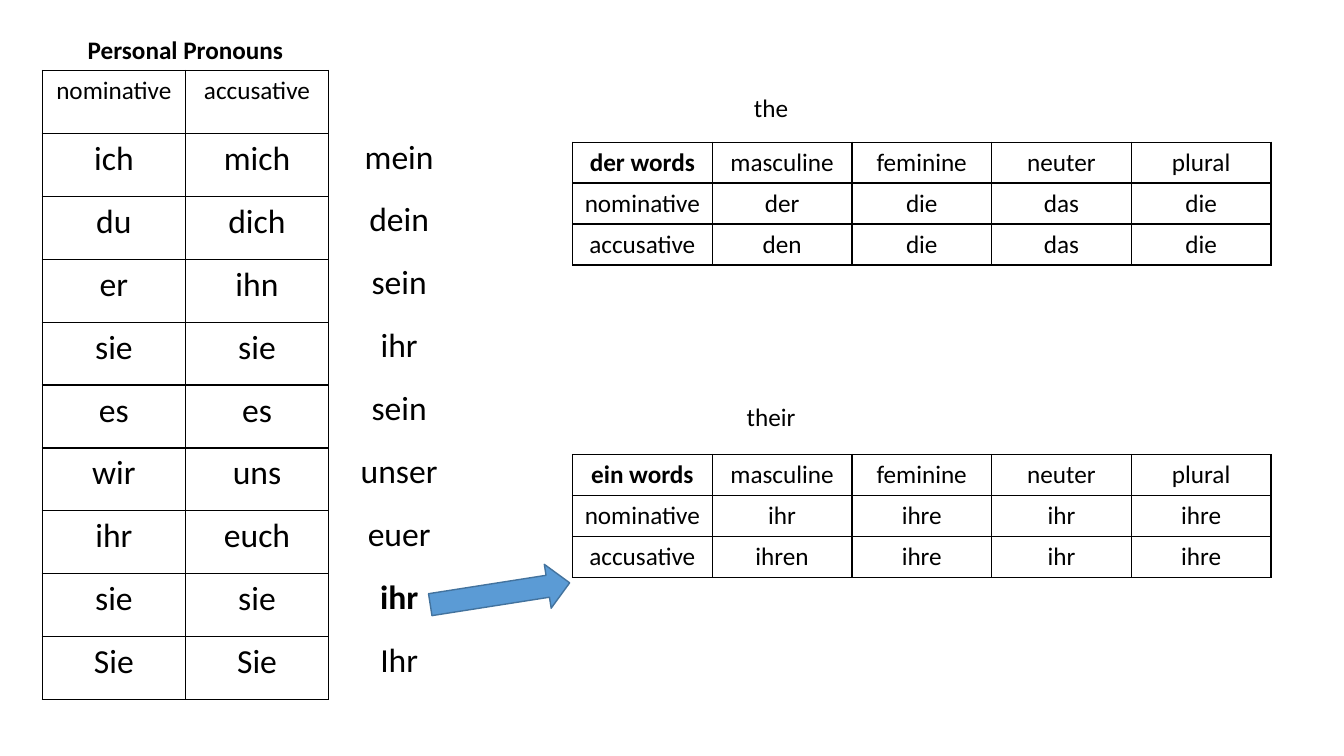
from lxml import etree
from pptx import Presentation
from pptx.dml.color import RGBColor
from pptx.enum.shapes import MSO_SHAPE as SHAPE
from pptx.enum.text import MSO_ANCHOR as ANCHOR, MSO_AUTO_SIZE as AUTO, PP_ALIGN as ALIGN
from pptx.oxml import parse_xml
from pptx.oxml.ns import nsdecls
from pptx.util import Pt

BLACK = RGBColor(0x00, 0x00, 0x00)
BLUE = RGBColor(0x5B, 0x9B, 0xD5)
DARK_BLUE = RGBColor(0x43, 0x73, 0x9E)
SMALL, LARGE = 18, 24
PRONOUN_ROW, ENDING_ROW = 44.93, 29.28
PRONOUN_TOP = 50.4

PRONOUNS = [
    ("nominative", "accusative"),
    ("ich", "mich"), ("du", "dich"), ("er", "ihn"),
    ("sie", "sie"), ("es", "es"), ("wir", "uns"),
    ("ihr", "euch"), ("sie", "sie"), ("Sie", "Sie"),
]
POSSESSIVES = ["mein", "dein", "sein", "ihr", "sein", "unser", "euer", "ihr", "Ihr"]
GENDERS = ("masculine", "feminine", "neuter", "plural")
ENDINGS = [
    ("the", 62.64, 101.52, "der words",
     ("der", "die", "das", "die"), ("den", "die", "das", "die")),
    ("their", 282.96, 324.72, "ein words",
     ("ihr", "ihre", "ihr", "ihre"), ("ihren", "ihre", "ihr", "ihre")),
]


class SlideBuilder:
    """Places styled elements on one slide, with lengths in points."""

    def __init__(self, slide, font="Calibri"):
        self.slide = slide
        self.font = font

    def set_text(self, tf, text, size, bold=False):
        tf.text = text
        p = tf.paragraphs[0]
        p.alignment = ALIGN.CENTER
        font = p.runs[0].font
        font.name, font.size, font.bold = self.font, Pt(size), bold
        font.color.rgb = BLACK

    def place_text(self, sp, x, y, text, bold=False):
        sp.left, sp.top, sp.width, sp.height = Pt(x), Pt(y), Pt(198.72), Pt(29)
        tf = sp.text_frame
        tf.word_wrap = True
        tf.auto_size = AUTO.NONE
        tf.vertical_anchor = ANCHOR.TOP
        self.set_text(tf, text, SMALL, bold)

    def title(self, x, y, text):
        self.place_text(self.slide.shapes.title, x, y, text, bold=True)

    def label(self, x, y, text):
        sp = self.slide.shapes.add_textbox(Pt(x), Pt(y), Pt(198.72), Pt(29))
        self.place_text(sp, x, y, text)

    def border(self, cell):
        tc_pr = cell._tc.get_or_add_tcPr()
        for side in "LRTB":
            ln = parse_xml(f'<a:ln{side} {nsdecls("a")} w="{Pt(1)}"><a:solidFill/></a:ln{side}>')
            etree.SubElement(ln[0], ln[0].tag.replace("solidFill", "srgbClr"), val=str(BLACK))
            tc_pr.append(ln)

    def table(self, x, y, rows, col_width, row_height, size,
              header_size=None, bold_cell=None, bordered=True):
        n_rows, n_cols = len(rows), len(rows[0])
        table = self.slide.shapes.add_table(
            n_rows, n_cols, Pt(x), Pt(y),
            Pt(col_width * n_cols), Pt(row_height * n_rows)).table
        table.first_row = table.horz_banding = False
        for column in table.columns:
            column.width = Pt(col_width)
        for r, words in enumerate(rows):
            table.rows[r].height = Pt(row_height)
            for c, word in enumerate(words):
                cell = table.cell(r, c)
                if bordered:
                    self.border(cell)
                cell.fill.background()
                cell_size = header_size if r == 0 and header_size else size
                self.set_text(cell.text_frame, word, cell_size, (r, c) == bold_cell)

    def arrow(self, x, y, width, height, rotation):
        sp = self.slide.shapes.add_shape(
            SHAPE.LEFT_ARROW, Pt(x), Pt(y), Pt(width), Pt(height))
        sp.rotation = rotation
        sp.shadow.inherit = False
        sp.fill.solid()
        sp.fill.fore_color.rgb = BLUE
        sp.line.color.rgb = DARK_BLUE
        sp.line.width = Pt(1)


def main():
    prs = Presentation()
    prs.slide_width, prs.slide_height = Pt(960), Pt(540)
    s = SlideBuilder(prs.slides.add_slide(prs.slide_layouts[5]))

    s.title(33.12, 20.88, "Personal Pronouns")
    s.table(30.24, PRONOUN_TOP, PRONOUNS, 102.24, PRONOUN_ROW, LARGE, header_size=SMALL)
    s.table(239.76, PRONOUN_TOP + PRONOUN_ROW - 1, [(word,) for word in POSSESSIVES],
            90.72, PRONOUN_ROW, LARGE, bold_cell=(7, 0), bordered=False)

    for meaning, label_top, table_top, heading, nominative, accusative in ENDINGS:
        s.label(451.44, label_top, meaning)
        rows = [(heading, *GENDERS), ("nominative", *nominative), ("accusative", *accusative)]
        s.table(408.96, table_top, rows, 99.8, ENDING_ROW, SMALL, bold_cell=(0, 0))

    s.arrow(306.72, 408.24, 100.8, 31.68, 171.1)
    prs.save("out.pptx")


if __name__ == "__main__":
    main()
